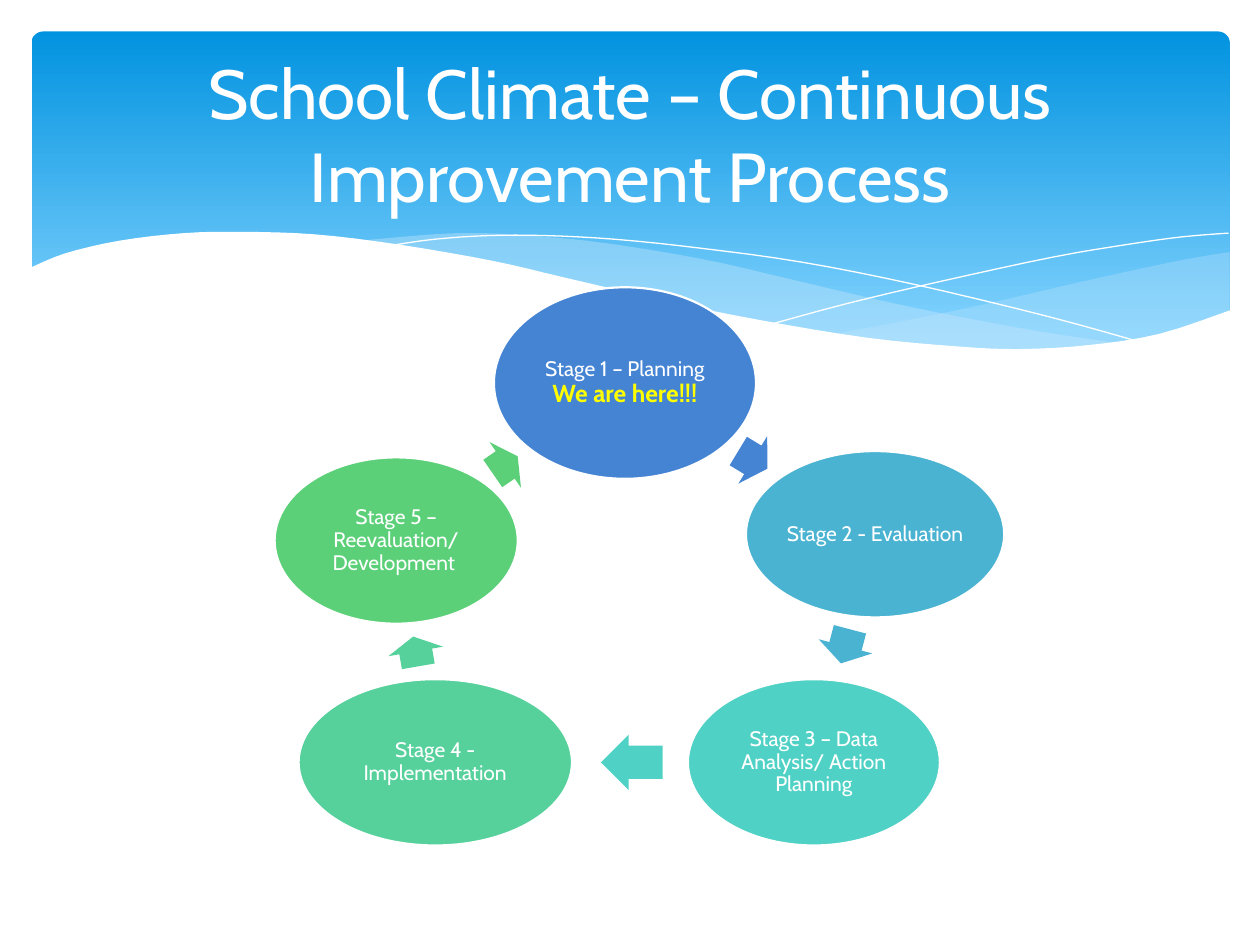
from dataclasses import dataclass

from lxml import etree
from pptx import Presentation
from pptx.dml.color import RGBColor
from pptx.enum.shapes import MSO_SHAPE
from pptx.enum.text import MSO_ANCHOR, PP_ALIGN
from pptx.oxml.ns import qn
from pptx.util import Inches, Pt

OVAL = MSO_SHAPE.OVAL
ARROW = MSO_SHAPE.RIGHT_ARROW
ROUND = MSO_SHAPE.ROUNDED_RECTANGLE
MIDDLE = MSO_ANCHOR.MIDDLE
CENTER = PP_ALIGN.CENTER


@dataclass(frozen=True)
class Theme:
    """Colours, font and type sizes."""
    font: str = "Cabin"
    white: str = "FFFFFF"
    mark: str = "FFFF00"
    sky: tuple = ("0293E0", "83D3FE")
    mist: str = "C6E7FC"
    title: float = 39.6
    body: float = 12
    loud: float = 14


THEME = Theme()

# Each stage: colour, oval box, label, note, arrow left, top, width, turn.
STAGES = [
    ("4584D3", (3.92, 2.28, 2.08, 1.52), "Stage 1 – Planning ",
     "We are here!!!", (5.84, 3.43, 0.27, 31.2)),
    ("4BB3D2", (5.92, 3.58, 2.05, 1.32), "Stage 2 - Evaluation",
     "", (6.57, 4.91, 0.28, 104.8)),
    ("50D1C5", (5.46, 5.39, 2, 1.32), "Stage 3 – Data Analysis/ Action Planning",
     "", (4.77, 5.83, 0.49, 180)),
    ("56D19C", (2.37, 5.39, 2.17, 1.32), "Stage 4 - Implementation",
     "", (3.18, 4.95, 0.24, 260.1)),
    ("5BD078", (2.18, 3.63, 1.93, 1.32), "Stage 5 – Reevaluation/ Development ",
     "", (3.89, 3.47, 0.24, 325.4)),
]

RIGHT_TOP = [(9.76, 2), (9.35, 2.07), (8.61, 2.23), (7.79, 2.42), (7.06, 2.57),
             (6.61, 2.65)]
RIGHT_LOW = [(6.61, 2.65), (7.05, 2.71), (7.57, 2.76), (8.03, 2.78),
             (8.54, 2.76), (8.97, 2.7), (9.35, 2.62), (9.76, 2.47)]
LONG_TOP = [(8.93, 2.73), (8.37, 2.65), (7.75, 2.54), (7.06, 2.4), (6.29, 2.22),
            (5.69, 2.08), (5.14, 1.98), (4.65, 1.91), (4.2, 1.87), (3.8, 1.85),
            (3.44, 1.86), (2.86, 1.91)]
LONG_LOW = [(2.86, 1.91), (3.42, 1.99), (4.04, 2.11), (4.49, 2.22), (5.3, 2.4),
            (6.01, 2.55), (6.65, 2.66), (7.22, 2.74), (7.73, 2.77),
            (8.18, 2.78), (8.57, 2.77), (8.93, 2.73)]
FALL = [(3.09, 1.95), (3.44, 1.9), (3.87, 1.87), (4.33, 1.87), (4.89, 1.9),
        (5.56, 1.97), (6.36, 2.08), (7.27, 2.26), (8.31, 2.51), (9.07, 2.72)]
RISE = [(6.13, 2.57), (6.72, 2.41), (7.48, 2.23), (8.36, 2.04), (8.95, 1.94),
        (9.38, 1.88), (9.75, 1.85)]
CREST = [(0.23, 2.13), (0.52, 2.01), (0.95, 1.91), (1.46, 1.85), (1.93, 1.84),
         (2.5, 1.86), (3.16, 1.94), (3.91, 2.07), (4.47, 2.2), (5.29, 2.39),
         (6.03, 2.54), (6.88, 2.68), (7.61, 2.75), (8.09, 2.77), (8.63, 2.74),
         (9.2, 2.65), (9.77, 2.46)]


def color(code):
    """Turn a hex code into a colour."""
    return RGBColor.from_string(code)


def smooth(knots, steps=4):
    """Run a Catmull-Rom curve through the knots."""
    ends = [knots[0], *knots, knots[-1]]
    curve = []
    for a, b, c, d in zip(ends, ends[1:], ends[2:], ends[3:]):
        for step in range(steps):
            t = step / steps
            curve.append(tuple(
                q + t / 2 * (r - p + t * (2 * p - 5 * q + 4 * r - s
                                          + t * (3 * (q - r) + s - p)))
                for p, q, r, s in zip(a, b, c, d)))
    return curve + [knots[-1]]


def paint(shape, fill=None, line=None, width=0):
    """Set a flat fill and outline, without shadow."""
    shape.shadow.inherit = False
    if fill:
        shape.fill.solid()
        shape.fill.fore_color.rgb = color(fill)
    else:
        shape.fill.background()
    if line:
        shape.line.color.rgb = color(line)
        shape.line.width = Pt(width)
    else:
        shape.line.fill.background()


def add_shape(slide, kind, box):
    """Add a preset shape with its box in inches."""
    return slide.shapes.add_shape(kind, *map(Inches, box))


def add_path(slide, points, fill=None, line=None, alpha=None):
    """Draw a filled wave, or an open line when there is no fill."""
    spots = [(Inches(x), Inches(y)) for x, y in points]
    pen = slide.shapes.build_freeform(*spots[0])
    pen.add_line_segments(spots[1:], close=bool(fill))
    shape = pen.convert_to_shape()
    paint(shape, fill, line)
    if alpha:
        tint = shape.fill._xPr.find(qn("a:solidFill"))[0]
        etree.SubElement(tint, qn("a:alpha"), val=str(alpha * 1000))


def style(run, size, code, bold=False):
    """Format one run."""
    run.font.name = THEME.font
    run.font.size = Pt(size)
    run.font.bold = bold
    run.font.color.rgb = color(code)


def set_text(shape, text, size):
    """Put centred white text in a shape and return its paragraph."""
    frame = shape.text_frame
    frame.word_wrap = True
    frame.vertical_anchor = MIDDLE
    frame.text = text
    para = frame.paragraphs[0]
    para.alignment = CENTER
    style(para.runs[0], size, THEME.white)
    return para


def add_banner(slide):
    """Draw the blue band and its waves."""
    band = add_shape(slide, ROUND, (0.25, 0.25, 9.51, 2.7))
    band.adjustments[0] = 0.034
    paint(band)
    band.fill.gradient()
    band.fill.gradient_angle = 270
    for stop, spot, code in zip(band.fill.gradient_stops, (0, 0.9), THEME.sky):
        stop.position = spot
        stop.color.rgb = color(code)
    add_path(slide, smooth(RIGHT_TOP) + smooth(RIGHT_LOW), THEME.mist, alpha=29)
    add_path(slide, smooth(LONG_TOP) + smooth(LONG_LOW), THEME.mist, alpha=40)
    for knots in (FALL, RISE):
        add_path(slide, smooth(knots), line=THEME.white)
    add_path(slide, smooth(CREST) + [(9.77, 3.29), (0.23, 3.29)], THEME.white)


def add_stage(slide, code, box, label, note, turn):
    """Draw one stage and the arrow to the next."""
    oval = add_shape(slide, OVAL, box)
    paint(oval, code, THEME.white, 1.25)
    frame = oval.text_frame
    frame.margin_left = frame.margin_right = Inches(0.02)
    frame.margin_top = frame.margin_bottom = Inches(0.02)
    para = set_text(oval, label, THEME.body)
    para.line_spacing = 0.9
    if note:
        run = para.add_run()
        run.text = note
        style(run, THEME.loud, THEME.mark, True)
    left, top, width, angle = turn
    arrow = add_shape(slide, ARROW, (left, top, width, 0.44))
    arrow.adjustments[0], arrow.adjustments[1] = 0.6, 0.5
    arrow.rotation = angle
    paint(arrow, code)


def add_title(slide, text):
    """Add the slide title."""
    box = slide.shapes.add_textbox(*map(Inches, (0.5, 0.37, 9, 1.37)))
    set_text(box, text, THEME.title)


def main():
    """Build and save the slide."""
    deck = Presentation()
    deck.slide_width, deck.slide_height = Inches(10), Inches(7.5)
    slide = deck.slides.add_slide(deck.slide_layouts[6])
    add_banner(slide)
    for stage in STAGES:
        add_stage(slide, *stage)
    add_title(slide, "School Climate – Continuous Improvement Process")
    deck.save("out.pptx")


if __name__ == "__main__":
    main()
